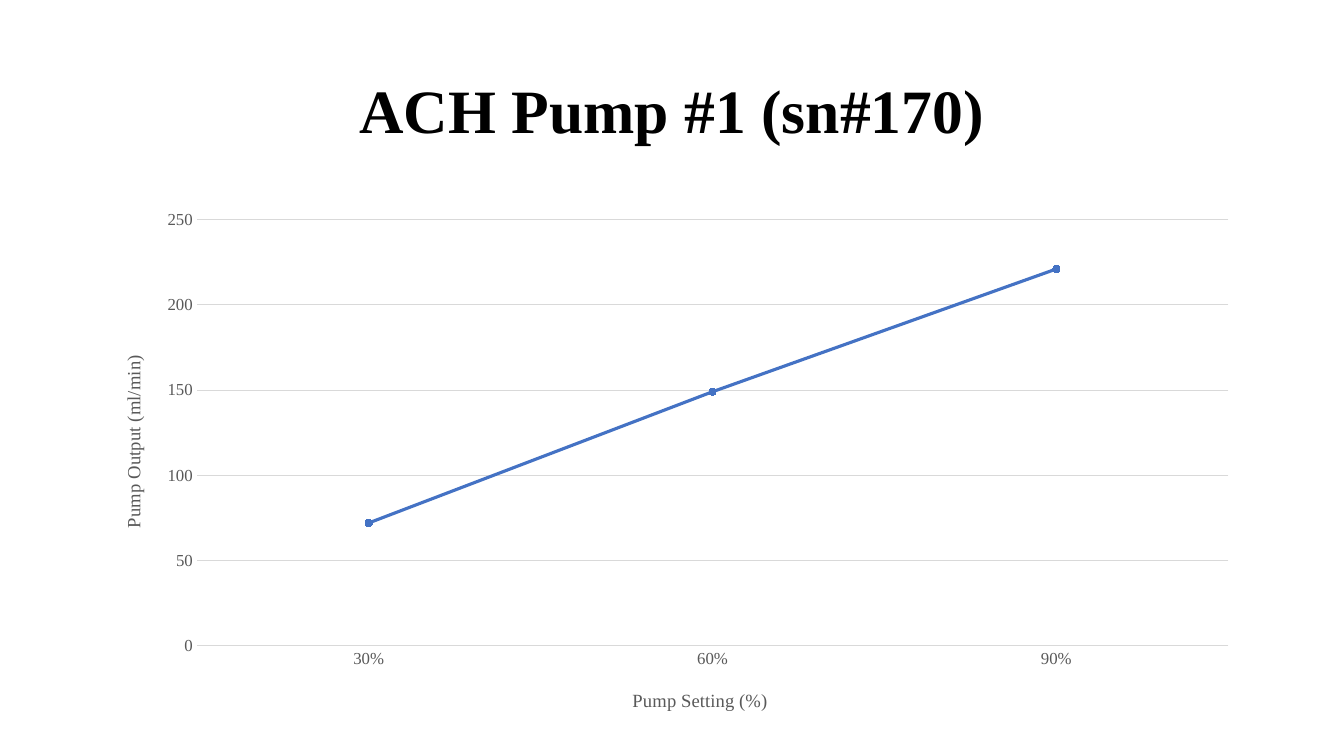
"""Build a slide with a line chart of pump output against pump setting."""
import pptx
import pptx.chart.data
import pptx.dml.color
import pptx.enum.chart
import pptx.enum.dml
import pptx.enum.text
import pptx.oxml
import pptx.oxml.ns
import pptx.util
from pptx.util import Cm, Pt

TITLE = "ACH Pump #1 (sn#170)"
SETTINGS = [0.3, 0.6, 0.9]
SERIES = ("Series 1", [72, 149, 221])
AXIS_TITLES = {"category": "Pump Setting (%)", "value": "Pump Output (ml/min)"}
FONT = "Times New Roman"
COLORS = {"title": "000000", "label": "595959", "grid": "D9D9D9", "line": "4472C4"}
LEFT, WIDTH = Cm(2.33), Cm(29.21)
TITLE_BOX = (LEFT, Cm(1.01), WIDTH, Cm(3.68))
CHART_BOX = (LEFT, Cm(5.07), WIDTH, Cm(13.26))
PLOT_LAYOUT = {"x": 0.09, "y": 0.035, "w": 0.89, "h": 0.81}
TITLE_LAYOUTS = {"category": {"x": 0.463, "y": 0.92}, "value": {"x": 0.022, "y": 0.286}}


def rgb(name):
    """Return a named colour."""
    return pptx.dml.color.RGBColor.from_string(COLORS[name])


def style_font(font, size, color, bold=False):
    """Set typeface, size, colour and weight."""
    font.name, font.size, font.bold = FONT, Pt(size), bold
    font.color.rgb = rgb(color)


def style_line(line, color, width):
    """Set line colour and width."""
    line.color.rgb = rgb(color)
    line.width = Pt(width)


def layout_xml(fractions, inner=False):
    """Return a manual chart layout element."""
    rows = '<c:layoutTarget val="inner"/>' if inner else ""
    rows += "".join(f'<c:{k}Mode val="edge"/>' for k in "xy")
    rows += "".join(f'<c:{k} val="{v}"/>' for k, v in fractions.items())
    ns = pptx.oxml.ns.nsdecls("c")
    return pptx.oxml.parse_xml(
        f"<c:layout {ns}><c:manualLayout>{rows}</c:manualLayout></c:layout>")


def place(element, layout, index):
    """Replace the layout of a chart element."""
    for old in element.findall(pptx.oxml.ns.qn("c:layout")):
        element.remove(old)
    element.insert(index, layout)


def style_axis(axis, kind):
    """Format one axis, its labels and its title."""
    axis.major_tick_mark = axis.minor_tick_mark = pptx.enum.chart.XL_TICK_MARK.NONE
    style_font(axis.tick_labels.font, 12, "label")
    p = axis.axis_title.text_frame.paragraphs[0]
    r = p.add_run()
    r.text = AXIS_TITLES[kind]
    style_font(r.font, 13.3, "label")
    place(axis.axis_title._element, layout_xml(TITLE_LAYOUTS[kind]), 1)


def add_title(slide):
    """Fill the title placeholder."""
    sp = slide.shapes.title
    sp.left, sp.top, sp.width, sp.height = TITLE_BOX
    tf = sp.text_frame
    tf.vertical_anchor = pptx.enum.text.MSO_ANCHOR.MIDDLE
    p = tf.paragraphs[0]
    p.alignment = pptx.enum.text.PP_ALIGN.CENTER
    p.line_spacing = 0.9
    r = p.add_run()
    r.text = TITLE
    style_font(r.font, 44, "title", True)


def add_pump_chart(slide):
    """Add the pump output chart."""
    data = pptx.chart.data.CategoryChartData()
    data.categories = SETTINGS
    data.categories.number_format = "0%"
    data.add_series(*SERIES)
    kind = pptx.enum.chart.XL_CHART_TYPE.LINE_MARKERS_STACKED
    chart = slide.shapes.add_chart(kind, *CHART_BOX, data).chart
    chart.has_legend = chart.has_title = False
    chart.font.name, chart.font.size = "Calibri", Pt(10)

    settings, output = chart.category_axis, chart.value_axis
    style_axis(settings, "category")
    style_axis(output, "value")
    settings.tick_labels.number_format = "0%"
    settings.tick_labels.number_format_is_linked = False
    style_line(settings.format.line, "grid", 0.75)
    output.minimum_scale, output.maximum_scale, output.major_unit = 0, 250, 50
    output.format.line.fill.background()
    style_line(output.major_gridlines.format.line, "grid", 0.75)

    plot = chart.plots[0]
    plot.vary_by_categories = False
    series = plot.series[0]
    series.smooth = False
    style_line(series.format.line, "line", 2.25)
    marker = series.marker
    marker.style, marker.size = pptx.enum.chart.XL_MARKER_STYLE.CIRCLE, 5
    marker.format.fill.solid()
    marker.format.fill.fore_color.rgb = rgb("line")
    style_line(marker.format.line, "line", 0.75)
    place(chart._chartSpace.chart.plotArea, layout_xml(PLOT_LAYOUT, True), 0)


def main():
    """Create and save the presentation."""
    prs = pptx.Presentation()
    prs.slide_width, prs.slide_height = Cm(33.87), Cm(19.05)
    slide = prs.slides.add_slide(prs.slide_layouts[5])
    add_title(slide)
    add_pump_chart(slide)
    prs.save("out.pptx")


if __name__ == "__main__":
    main()
